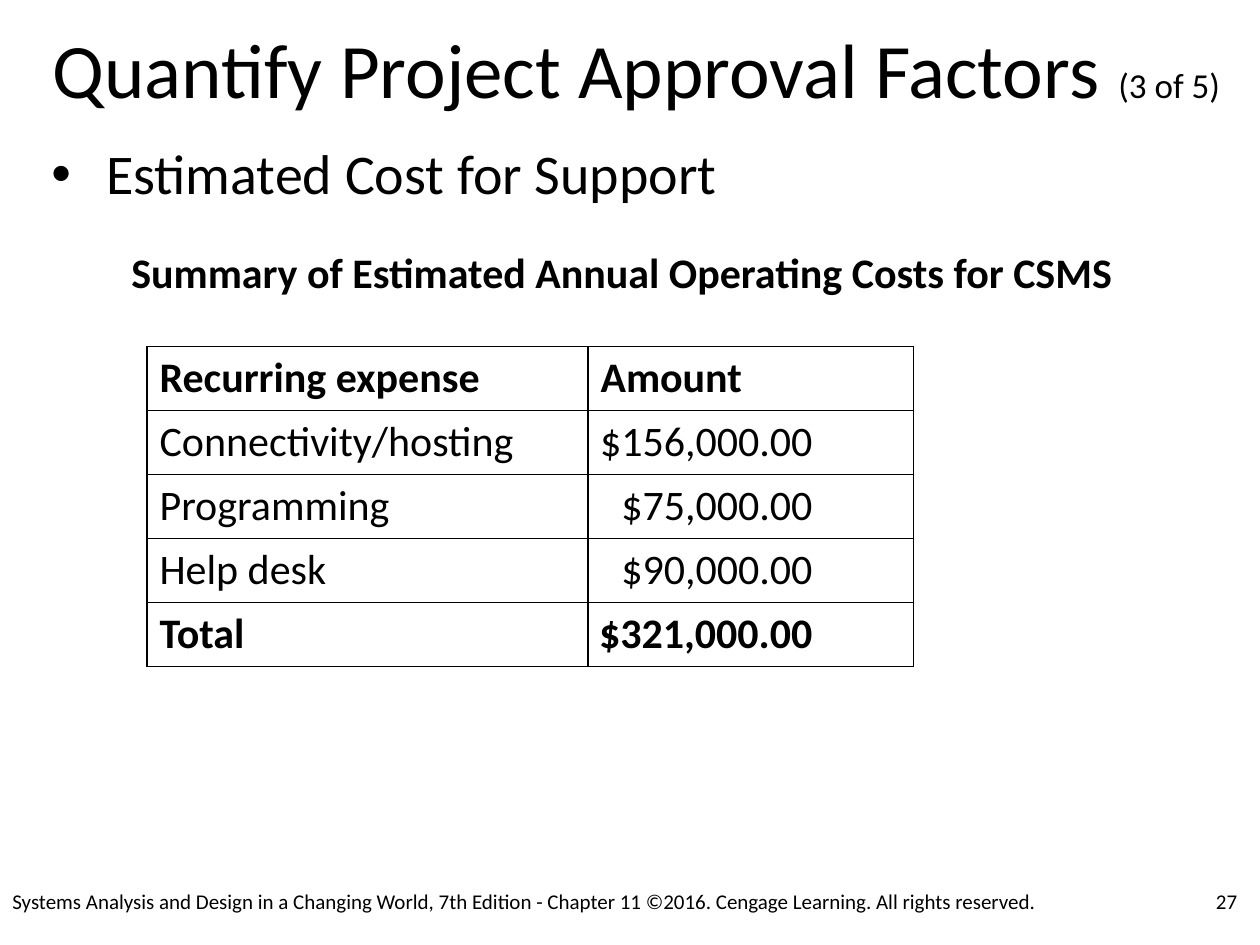
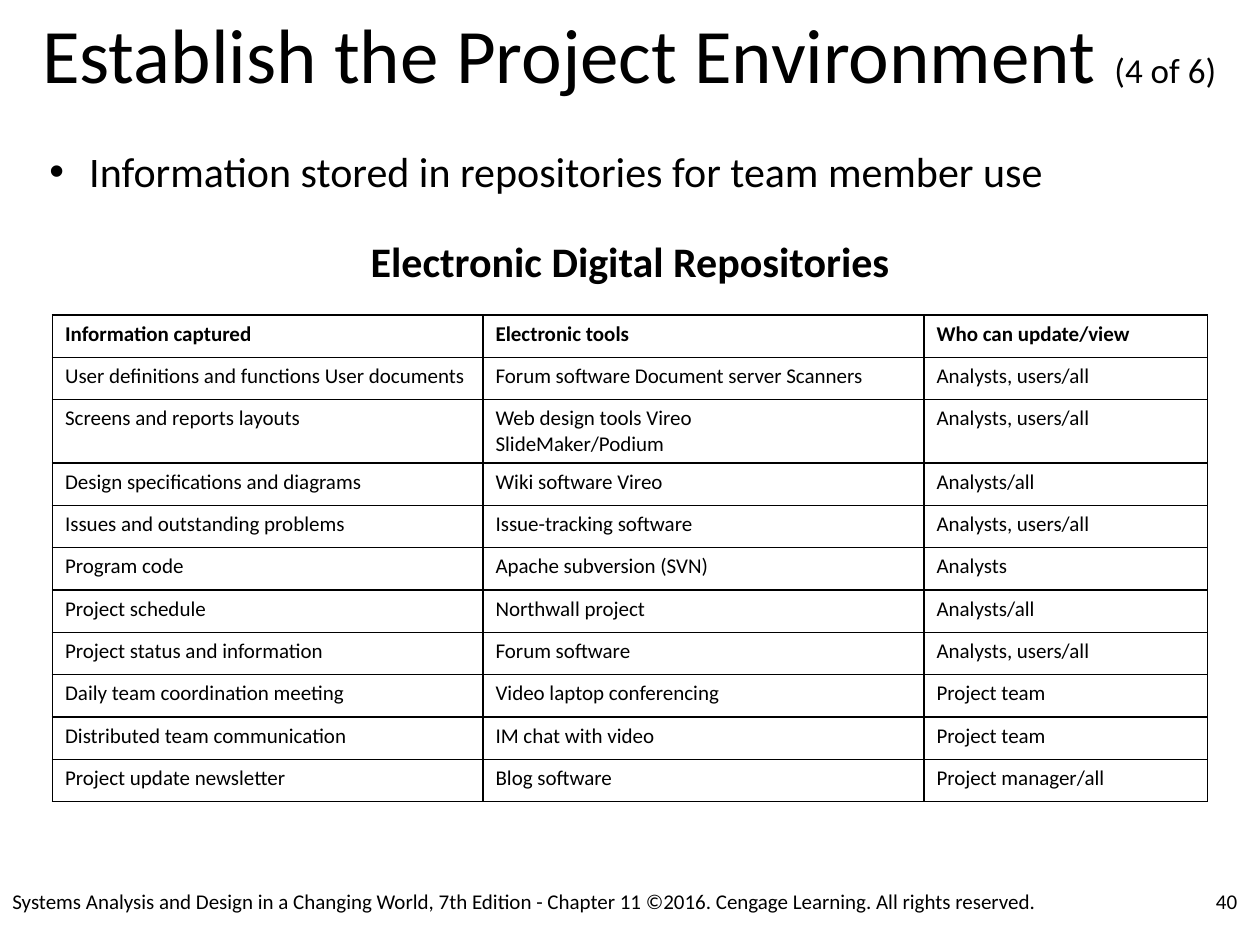
import pptx
import pptx.dml.color
import pptx.enum.text
import pptx.oxml
import pptx.oxml.ns
import pptx.util

BLACK = pptx.dml.color.RGBColor(0, 0, 0)
WHITE = pptx.dml.color.RGBColor(255, 255, 255)
FONT = "Calibri"
COLS, ROWS = 120, 90  # grid cells of 1/12 inch
ALIGN = pptx.enum.text.PP_ALIGN
ANCHOR = pptx.enum.text.MSO_ANCHOR
NOTICE = ("Systems Analysis and Design in a Changing World, 7th Edition - "
          "Chapter 11 ©2016. Cengage Learning. All rights reserved.")

COSTS = [
    ("Recurring expense", "Amount"),
    ("Connectivity/hosting", "$156,000.00"),
    ("Programming", "$75,000.00"),
    ("Help desk", "$90,000.00"),
    ("Total", "$321,000.00"),
]
TOOLS = [
    ("Information captured", "Electronic tools", "Who can update/view"),
    ("User definitions and functions User documents",
     "Forum software Document server Scanners", "Analysts, users/all"),
    ("Screens and reports layouts",
     "Web design tools Vireo\nSlideMaker/Podium", "Analysts, users/all"),
    ("Design specifications and diagrams", "Wiki software Vireo", "Analysts/all"),
    ("Issues and outstanding problems", "Issue-tracking software", "Analysts, users/all"),
    ("Program code", "Apache subversion (SVN)", "Analysts"),
    ("Project schedule", "Northwall project", "Analysts/all"),
    ("Project status and information", "Forum software", "Analysts, users/all"),
    ("Daily team coordination meeting", "Video laptop conferencing", "Project team"),
    ("Distributed team communication", "IM chat with video", "Project team"),
    ("Project update newsletter", "Blog software", "Project manager/all"),
]


class Deck:
    def __init__(self):
        self.prs = pptx.Presentation()
        self.prs.slide_width = pptx.util.Inches(10)
        self.prs.slide_height = pptx.util.Inches(7.5)
        self.slide = None

    def across(self, cols):
        return round(self.prs.slide_width * cols / COLS)

    def down(self, rows):
        return round(self.prs.slide_height * rows / ROWS)

    def area(self, box):
        left, top, width, height = box
        return self.across(left), self.down(top), self.across(width), self.down(height)

    def style(self, para, size, bold=False):
        font = para.font
        font.name, font.size, font.bold = FONT, pptx.util.Pt(size), bold
        font.color.rgb = BLACK

    def fill(self, holder, box, text):
        """Move a placeholder to its box and give it one line of text."""
        holder.left, holder.top, holder.width, holder.height = self.area(box)
        frame = holder.text_frame
        frame.margin_left = frame.margin_right = frame.margin_top = frame.margin_bottom = 0
        frame.word_wrap = True
        frame.auto_size = pptx.enum.text.MSO_AUTO_SIZE.NONE
        frame.vertical_anchor = ANCHOR.TOP
        frame.text = text
        para = frame.paragraphs[0]
        para.alignment = ALIGN.LEFT
        para.line_spacing = 0.9
        para.space_before = pptx.util.Pt(0)
        return para

    def page(self, number, title, part, box):
        """Start a slide with its title, part count and footer."""
        layout = self.prs.slide_layouts.get_by_name("Two Content")
        self.slide = self.prs.slides.add_slide(layout)
        para = self.fill(self.slide.shapes.title, box, title + " ")
        self.style(para, 44)
        para.add_run().text = part
        para.runs[1].font.size = pptx.util.Pt(20)
        self.note((109, 83.4, 10, 4.8), str(number), ALIGN.RIGHT)
        self.note((0, 83.4, 101, 4.8), NOTICE, ALIGN.LEFT)

    def note(self, box, text, align):
        frame = self.slide.shapes.add_textbox(*self.area(box)).text_frame
        frame.word_wrap = True
        frame.vertical_anchor = ANCHOR.MIDDLE
        frame.text = text
        frame.paragraphs[0].alignment = align
        self.style(frame.paragraphs[0], 12)

    def body(self, slot, box, text, size, bold=False, indent=0):
        """Fill a body placeholder; an indent in columns gives it a bullet."""
        para = self.fill(self.slide.placeholders[slot], box, text)
        props = para._p.get_or_add_pPr()
        props.set("marL", str(self.across(indent)))
        props.set("indent", str(-self.across(indent)))
        tag = '<a:buChar %s char="•"/>' if indent else "<a:buNone %s/>"
        props.append(pptx.oxml.parse_xml(tag % pptx.oxml.ns.nsdecls("a")))
        self.style(para, size, bold)

    def bullet(self, box, text, size, indent):
        self.body(1, box, text, size, indent=indent)

    def heading(self, box, text):
        self.body(2, box, text, 24, bold=True)

    def border(self, cell):
        props = cell._tc.get_or_add_tcPr()
        for side in "LRTB":
            props.append(pptx.oxml.parse_xml(
                f'<a:ln{side} {pptx.oxml.ns.nsdecls("a")} w="12700"><a:solidFill>'
                f'<a:srgbClr val="{BLACK}"/></a:solidFill></a:ln{side}>'))

    def table(self, left, top, widths, heights, data, size, strong):
        """Draw a ruled table; strong lists the bold rows."""
        box = left, top, sum(widths), sum(heights)
        grid = self.slide.shapes.add_table(len(data), len(widths), *self.area(box)).table
        grid.first_row = grid.horz_banding = False
        for col, width in zip(grid.columns, widths):
            col.width = self.across(width)
        for row, height in zip(grid.rows, heights):
            row.height = self.down(height)
        for r, line in enumerate(data):
            for c, text in enumerate(line):
                cell = grid.cell(r, c)
                self.border(cell)
                cell.fill.solid()
                cell.fill.fore_color.rgb = WHITE
                cell.text = text
                money = text.startswith("$")
                if money:
                    cell.margin_left, cell.margin_right = 0, self.across(9.6)
                for para in cell.text_frame.paragraphs:
                    para.alignment = ALIGN.RIGHT if money else ALIGN.LEFT
                    self.style(para, size, r in strong)


def main():
    deck = Deck()

    deck.page(27, "Quantify Project Approval Factors", "(3 of 5)", (5, 3, 112, 8))
    deck.bullet((4.9, 13.9, 110, 5.4), "Estimated Cost for Support", 32, 5.2)
    deck.heading((12.5, 24, 95, 4.3), "Summary of Estimated Annual Operating Costs for CSMS")
    deck.table(14, 33, [42, 31], [6.1] * len(COSTS), COSTS, 24, {0, len(COSTS) - 1})

    deck.page(40, "Establish the Project Environment", "(4 of 6)", (4, 1.6, 114, 8))
    deck.bullet((4.7, 14.4, 115, 4.3), "Information stored in repositories for team member use",
                24, 3.8)
    deck.heading((35.3, 23, 49.6, 4.3), "Electronic Digital Repositories")
    heights = [6.05 if any("\n" in text for text in line) else 4.03 for line in TOOLS]
    deck.table(5, 30, [41, 42, 27], heights, TOOLS, 12, {0})

    deck.prs.save("out.pptx")


if __name__ == "__main__":
    main()
